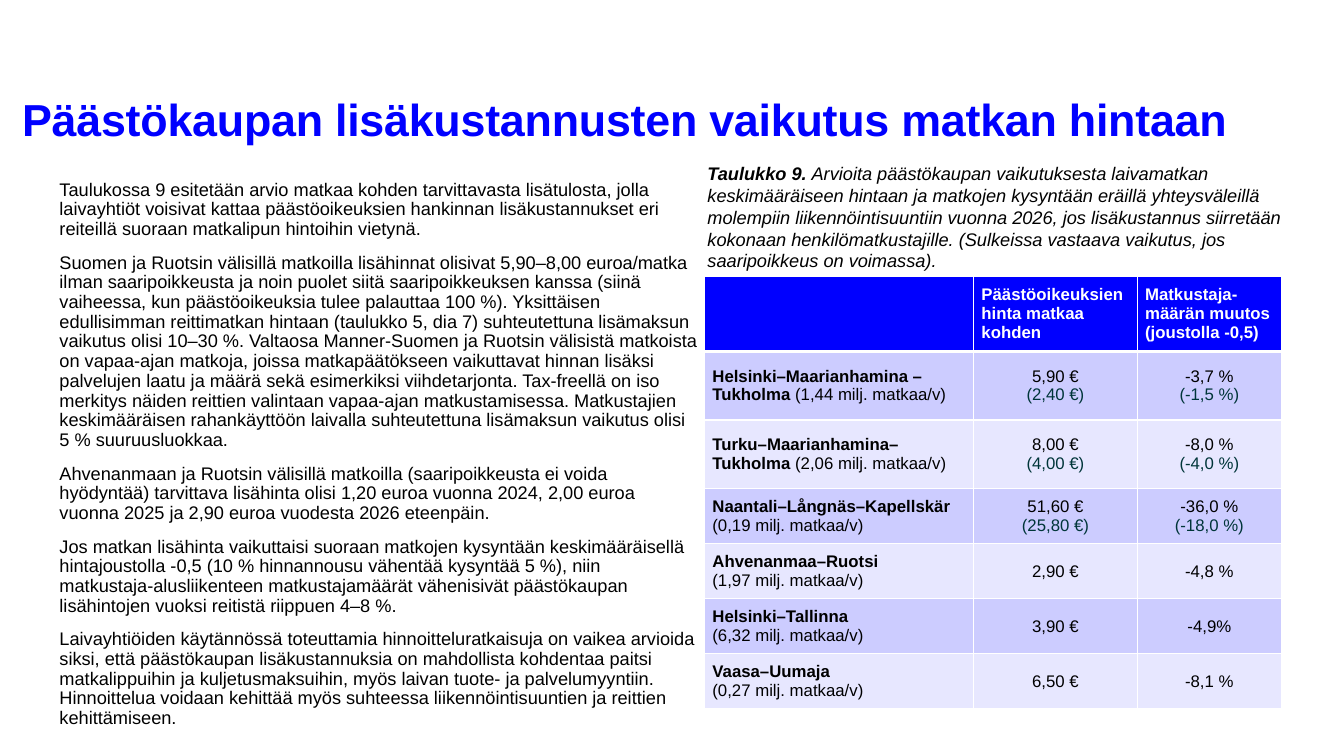
from lxml.etree import SubElement
from pptx import Presentation
from pptx.dml.color import RGBColor
from pptx.enum.text import MSO_ANCHOR, MSO_AUTO_SIZE, PP_ALIGN
from pptx.oxml import parse_xml
from pptx.oxml.ns import nsdecls, qn
from pptx.util import Pt


def rgb(value):
    return RGBColor.from_string(value)


def style(run, size, color="000000", bold=False, italic=False):
    run.font.name = "Arial"
    run.font.size = Pt(size)
    run.font.color.rgb = rgb(color)
    run.font.bold = bold
    run.font.italic = italic


BLUE, WHITE, TEAL = "0000FF", "FFFFFF", "003539"
BANDS = ["CCCCFF", "E7E7FF"]

prs = Presentation()
prs.slide_width, prs.slide_height = Pt(960), Pt(540)
slide = prs.slides.add_slide(prs.slide_layouts[1])

title = slide.shapes.title
title.left, title.top, title.width, title.height = Pt(15.8), Pt(28), Pt(873.4), Pt(76.4)
title.text_frame.text = "Päästökaupan lisäkustannusten vaikutus matkan hintaan"
title.text_frame.vertical_anchor = MSO_ANCHOR.BOTTOM
heading = title.text_frame.paragraphs[0]
heading.alignment = PP_ALIGN.LEFT
heading.line_spacing = 0.85
style(heading.runs[0], 32, BLUE, bold=True)
heading.runs[0].font._element.set("spc", "-20")

body = slide.placeholders[1]
body.left, body.top, body.width, body.height = Pt(42.5), Pt(128.9), Pt(455.8), Pt(393.8)
body.fill.solid()
body.fill.fore_color.rgb = rgb(WHITE)
for frame in (title.text_frame, body.text_frame):
    frame.margin_left = frame.margin_right = frame.margin_top = frame.margin_bottom = 0
    frame.word_wrap = True
    frame.auto_size = MSO_AUTO_SIZE.NONE

body_texts = [
    "Taulukossa 9 esitetään arvio matkaa kohden tarvittavasta lisätulosta, jolla laivayhtiöt "
    "voisivat kattaa päästöoikeuksien hankinnan lisäkustannukset eri reiteillä suoraan "
    "matkalipun hintoihin vietynä.",
    "Suomen ja Ruotsin välisillä matkoilla lisähinnat olisivat 5,90–8,00 euroa/matka ilman "
    "saaripoikkeusta ja noin puolet siitä saaripoikkeuksen kanssa (siinä vaiheessa, kun "
    "päästöoikeuksia tulee palauttaa 100 %). Yksittäisen edullisimman reittimatkan hintaan "
    "(taulukko 5, dia 7) suhteutettuna lisämaksun vaikutus olisi 10–30 %. Valtaosa "
    "Manner-Suomen ja Ruotsin välisistä matkoista on vapaa-ajan matkoja, joissa "
    "matkapäätökseen vaikuttavat hinnan lisäksi palvelujen laatu ja määrä sekä esimerkiksi "
    "viihdetarjonta. Tax-freellä on iso merkitys näiden reittien valintaan vapaa-ajan "
    "matkustamisessa. Matkustajien keskimääräisen rahankäyttöön laivalla suhteutettuna "
    "lisämaksun vaikutus olisi 5 % suuruusluokkaa.",
    "Ahvenanmaan ja Ruotsin välisillä matkoilla (saaripoikkeusta ei voida hyödyntää) "
    "tarvittava lisähinta olisi 1,20 euroa vuonna 2024, 2,00 euroa vuonna 2025 ja 2,90 euroa "
    "vuodesta 2026 eteenpäin.",
    "Jos matkan lisähinta vaikuttaisi suoraan matkojen kysyntään keskimääräisellä "
    "hintajoustolla -0,5 (10 % hinnannousu vähentää kysyntää 5 %), niin "
    "matkustaja-alusliikenteen matkustajamäärät vähenisivät päästökaupan lisähintojen vuoksi "
    "reitistä riippuen 4–8 %.",
    "Laivayhtiöiden käytännössä toteuttamia hinnoitteluratkaisuja on vaikea arvioida siksi, "
    "että päästökaupan lisäkustannuksia on mahdollista kohdentaa paitsi matkalippuihin ja "
    "kuljetusmaksuihin, myös laivan tuote- ja palvelumyyntiin. Hinnoittelua voidaan kehittää "
    "myös suhteessa liikennöintisuuntien ja reittien kehittämiseen.",
]
body.text_frame.text = "\n".join(body_texts)
for i, paragraph in enumerate(body.text_frame.paragraphs):
    properties = paragraph._p.get_or_add_pPr()
    properties.set("marL", "0")
    properties.set("indent", "0")
    SubElement(properties, qn("a:buNone"))
    paragraph.line_spacing = 0.9
    paragraph.space_before = Pt(10 if i else 0)
    style(paragraph.runs[0], 13)

caption = slide.shapes.add_textbox(Pt(498.3), Pt(112.3), Pt(427), Pt(85.7))
caption.text_frame.word_wrap = True
caption_line = caption.text_frame.paragraphs[0]
caption_parts = [
    ("Taulukko 9. ", True),
    ("Arvioita päästökaupan vaikutuksesta laivamatkan keskimääräiseen hintaan ja matkojen "
     "kysyntään eräillä yhteysväleillä molempiin liikennöintisuuntiin vuonna 2026, jos "
     "lisäkustannus siirretään kokonaan henkilömatkustajille. (Sulkeissa vastaava vaikutus, "
     "jos saaripoikkeus on voimassa).", False),
]
for text, bold in caption_parts:
    run = caption_line.add_run()
    run.text = text
    style(run, 13, bold=bold, italic=True)

headers = ["", "Päästöoikeuksien hinta matkaa kohden", "Matkustaja-määrän muutos (joustolla -0,5)"]
# A line break in the passenger part starts a new paragraph
routes = [
    ("Helsinki–Maarianhamina – Tukholma", " (1,44 milj. matkaa/v)", "5,90 €\n(2,40 €)", "-3,7 %\n(-1,5 %)"),
    ("Turku–Maarianhamina– Tukholma ", "(2,06 milj. matkaa/v)", "8,00 €\n(4,00 €)", "-8,0 %\n(-4,0 %)"),
    ("Naantali–Långnäs–Kapellskär ", "(0,19 milj. matkaa/v)", "51,60 €\n(25,80 €)", "-36,0 %\n(-18,0 %)"),
    ("Ahvenanmaa–Ruotsi", "\n(1,97 milj. matkaa/v)", "2,90 €", "-4,8 %"),
    ("Helsinki–Tallinna", "\n(6,32 milj. matkaa/v)", "3,90 €", "-4,9%"),
    ("Vaasa–Uumaja", "\n(0,27 milj. matkaa/v)", "6,50 €", "-8,1 %"),
]
column_widths = [192.2, 116.9, 103]
row_heights = [51.4, 49, 49] + [38.2] * 4
prices = slide.shapes.add_table(
    len(row_heights), len(column_widths), Pt(503.3), Pt(197.2),
    Pt(sum(column_widths)), Pt(sum(row_heights))).table
for column, width in zip(prices.columns, column_widths):
    column.width = Pt(width)
for row, height in zip(prices.rows, row_heights):
    row.height = Pt(height)

for c, header in enumerate(headers):
    cell = prices.cell(0, c)
    cell.text_frame.text = header
    for run in cell.text_frame.paragraphs[0].runs:
        style(run, 12, WHITE, bold=True)

for r, (route, passengers, *effects) in enumerate(routes, 1):
    route_frame = prices.cell(r, 0).text_frame
    route_frame.text = route
    style(route_frame.paragraphs[0].runs[0], 12, bold=True)
    if passengers.startswith("\n"):
        passenger_line = route_frame.add_paragraph()
    else:
        passenger_line = route_frame.paragraphs[0]
    passenger_run = passenger_line.add_run()
    passenger_run.text = passengers.lstrip("\n")
    style(passenger_run, 12)
    for c, effect in enumerate(effects, 1):
        effect_frame = prices.cell(r, c).text_frame
        effect_frame.text = effect
        for paragraph, color in zip(effect_frame.paragraphs, ["000000", TEAL]):
            paragraph.alignment = PP_ALIGN.CENTER
            style(paragraph.runs[0], 12, color)

for r in range(len(row_heights)):
    for c in range(len(column_widths)):
        cell = prices.cell(r, c)
        cell.vertical_anchor = MSO_ANCHOR.MIDDLE
        cell.margin_left = cell.margin_right = Pt(5.6)
        cell.margin_top = cell.margin_bottom = Pt(5.3)
        cell.fill.solid()
        cell.fill.fore_color.rgb = rgb(BANDS[(r - 1) % 2] if r else BLUE)
        thick_sides = {0: "B", 1: "T"}.get(r, "")
        for i, side in enumerate("LRTB"):
            width = Pt(3 if side == thick_sides else 1)
            cell._tc.get_or_add_tcPr().insert(i, parse_xml(
                f'<a:ln{side} {nsdecls("a")} w="{width}"><a:solidFill>'
                f'<a:srgbClr val="{WHITE}"/></a:solidFill></a:ln{side}>'))

prs.save("out.pptx")
